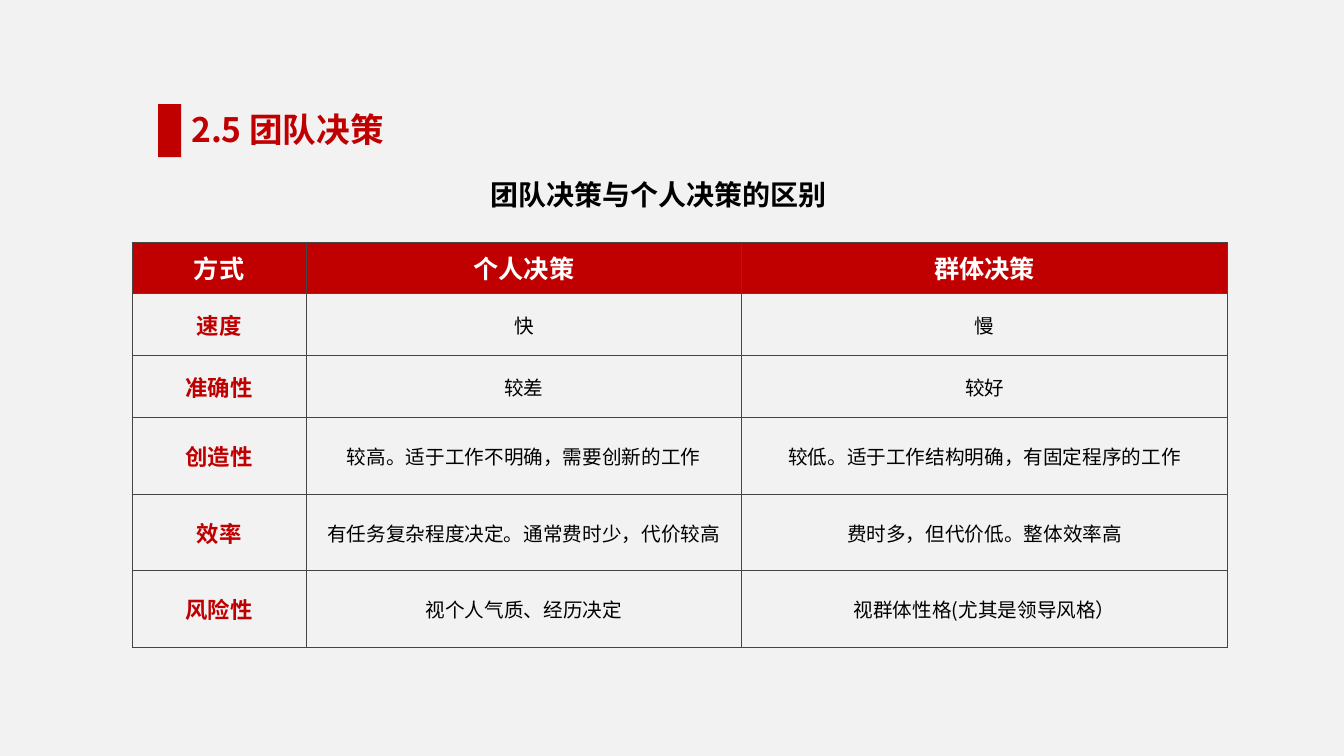
from lxml.etree import SubElement
from pptx import Presentation
from pptx.dml.color import RGBColor
from pptx.enum.shapes import MSO_SHAPE
from pptx.enum.text import MSO_ANCHOR, MSO_AUTO_SIZE, PP_ALIGN
from pptx.oxml.ns import qn
from pptx.util import Pt

PX = 9080
FONT = "Noto Sans CJK SC"
RED = "C00000"


def paint(color, code):
    color.rgb = RGBColor.from_string(code)


def write(frame, text, size, code, bold, align):
    frame.word_wrap = True
    para = frame.paragraphs[0]
    para.alignment = align
    run = para.add_run()
    run.text = text
    font = run.font
    font.size, font.bold, font.name = Pt(size), bold, FONT
    paint(font.color, code)
    SubElement(font._element, qn("a:ea"), typeface=FONT)


deck = Presentation()
deck.slide_width, deck.slide_height = 1343 * PX, 755 * PX
slide = deck.slides.add_slide(deck.slide_layouts[5])
back = slide.background.fill
back.solid()
paint(back.fore_color, "F2F2F2")

rows = [
    ("方式", "个人决策", "群体决策"),
    ("速度", "快", "慢"),
    ("准确性", "较差", "较好"),
    ("创造性", "较高。适于工作不明确，需要创新的工作", "较低。适于工作结构明确，有固定程序的工作"),
    ("效率", "有任务复杂程度决定。通常费时少，代价较高", "费时多，但代价低。整体效率高"),
    ("风险性", "视个人气质、经历决定", "视群体性格(尤其是领导风格）"),
]
widths = [174, 435, 486]
heights = [51, 62, 62, 77, 76, 77]
table = slide.shapes.add_table(
    len(rows), len(widths), 132 * PX, 242 * PX, sum(widths) * PX, sum(heights) * PX
).table
table.first_row = table.horz_banding = False
for col, width in zip(table.columns, widths):
    col.width = width * PX
for row, height in zip(table.rows, heights):
    row.height = height * PX

for r, row in enumerate(rows):
    for c, text in enumerate(row):
        cell = table.cell(r, c)
        cell.vertical_anchor = MSO_ANCHOR.MIDDLE
        props = cell._tc.get_or_add_tcPr()
        for side in "LRTB":
            line = SubElement(props, qn(f"a:ln{side}"), w=str(Pt(0.75)))
            fill = SubElement(line, qn("a:solidFill"))
            SubElement(fill, qn("a:srgbClr"), val="454545")
        if r == 0:
            cell.fill.solid()
            paint(cell.fill.fore_color, RED)
            style = 18, "FFFFFF", True
        else:
            cell.fill.background()
            style = (16, RED, True) if c == 0 else (14, "000000", False)
        write(cell.text_frame, text, *style, PP_ALIGN.CENTER)

title = slide.shapes.title
title.left, title.top, title.width, title.height = 181 * PX, 104 * PX, 516 * PX, 50 * PX
note = slide.shapes.add_textbox(426 * PX, 173 * PX, 464 * PX, 43 * PX)
for box, text, size, code, align in [
    (title, "2.5 团队决策", 24, RED, PP_ALIGN.LEFT),
    (note, "团队决策与个人决策的区别", 20, "000000", PP_ALIGN.CENTER),
]:
    frame = box.text_frame
    frame.auto_size = MSO_AUTO_SIZE.NONE
    frame.vertical_anchor = MSO_ANCHOR.MIDDLE
    frame.margin_top = frame.margin_bottom = 0
    write(frame, text, size, code, True, align)

bar = slide.shapes.add_shape(MSO_SHAPE.RECTANGLE, 158 * PX, 104 * PX, 23 * PX, 53 * PX)
bar.shadow.inherit = False
bar.fill.solid()
paint(bar.fill.fore_color, RED)
bar.line.fill.background()

deck.save("out.pptx")
